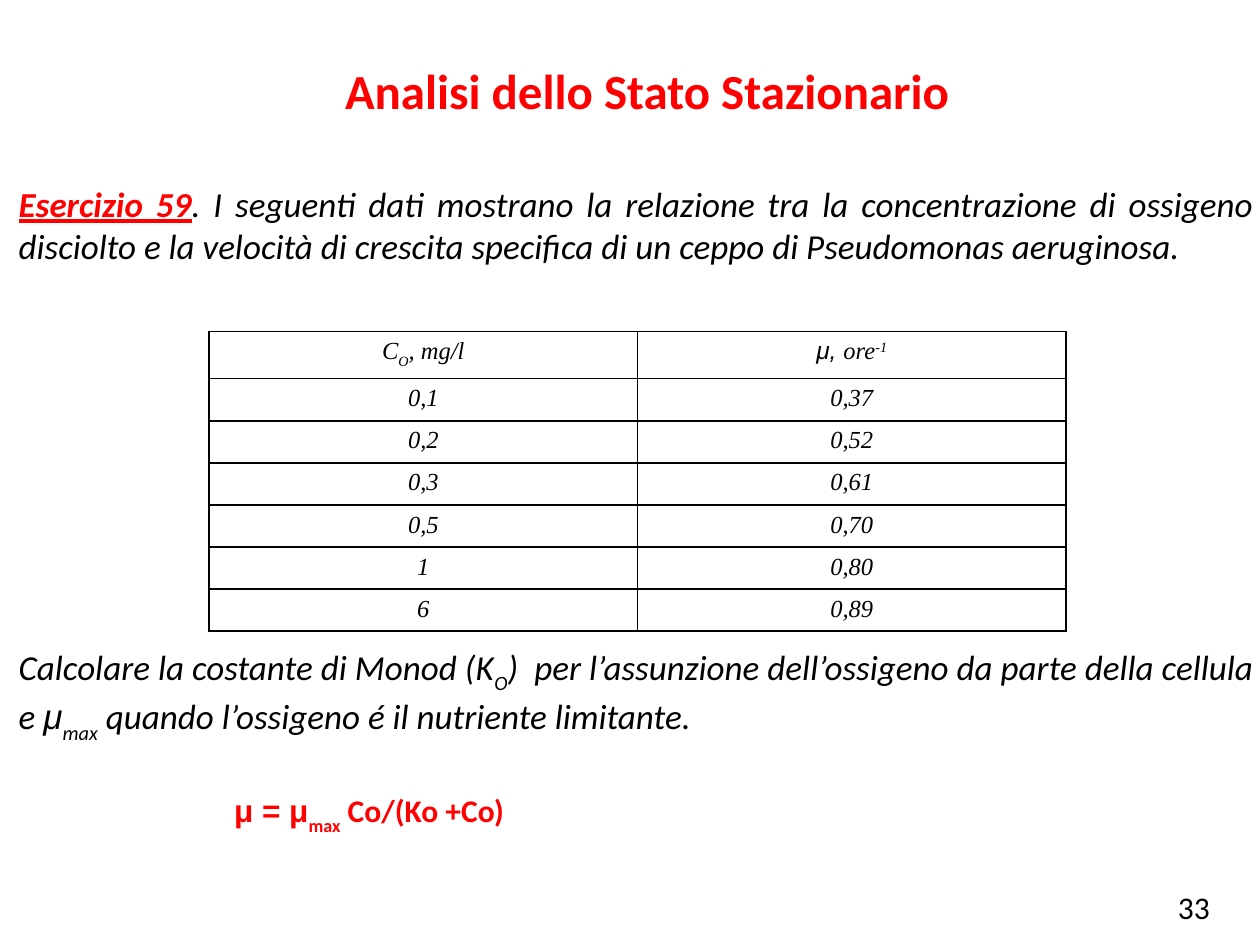
from lxml import etree
from pptx import Presentation
from pptx.dml.color import RGBColor
from pptx.enum import text
from pptx.oxml.ns import qn
from pptx.util import Inches, Pt

COLORS = {"red": "FF0000", "black": "000000"}
SUB, SUP = -30000, 30000

# A run is (text, options); options: font, baseline, and lead for the exercise label
TITLE = [("Analisi dello Stato Stazionario", {})]
INTRO = [
    ("Esercizio 59", {"lead": True}),
    (". I seguenti dati mostrano la relazione tra la concentrazione di ossigeno "
     "disciolto e la velocità di crescita specifica di un ceppo di Pseudomonas "
     "aeruginosa.", {}),
]
QUESTION = [
    ("Calcolare la costante di Monod (K", {}),
    ("O", {"baseline": SUB}),
    (")  per l’assunzione dell’ossigeno da parte della cellula e ", {}),
    ("μ", {"font": "Arial"}),
    ("max", {"baseline": SUB}),
    (" quando l’ossigeno é il nutriente limitante.", {}),
]
FORMULA = [
    ("μ = μ", {"font": "Arial"}),
    ("max", {"baseline": SUB}),
    (" Co/(Ko +Co)", {}),
]
PAGE = [("33", {})]
HEADER = [
    [("C", {}), ("O", {"baseline": SUB}), (", mg/l", {})],
    [("μ, ", {"font": "Arial"}), ("ore", {}), ("-1", {"baseline": SUP})],
]
DATA = [("0,1", "0,37"), ("0,2", "0,52"), ("0,3", "0,61"),
        ("0,5", "0,70"), ("1", "0,80"), ("6", "0,89")]
HEADER_HEIGHT, ROW_HEIGHT, COL_WIDTH = 0.37, 0.33, 3.4


def rgb(name):
    return RGBColor.from_string(COLORS[name])


def write(tf, runs, size, color="black", font="Calibri", bold=False,
          italic=False, align=text.PP_ALIGN.LEFT):
    p = tf.paragraphs[0]
    p.alignment = align
    p.font.size, p.font.bold, p.font.italic = Pt(size), bold, italic
    for words, options in runs:
        r = p.add_run()
        r.text = words
        f = r.font
        f.size, f.bold, f.italic = Pt(size), bold, italic
        f.name = options.get("font", font)
        f.color.rgb = rgb(color)
        if options.get("lead"):
            f.bold = f.underline = True
            f.color.rgb = rgb("red")
        if "baseline" in options:
            r._r.get_or_add_rPr().set("baseline", str(options["baseline"]))


def add_text(s, box, runs, size, wrap=True, **style):
    tf = s.shapes.add_textbox(*map(Inches, box)).text_frame
    tf.word_wrap = wrap
    write(tf, runs, size, **style)


def set_borders(cell):
    tcPr = cell._tc.get_or_add_tcPr()
    for i, side in enumerate(("lnL", "lnR", "lnT", "lnB")):
        ln = etree.Element(qn(f"a:{side}"), w=str(Pt(1)))
        fill = etree.SubElement(ln, qn("a:solidFill"))
        etree.SubElement(fill, qn("a:srgbClr"), val=COLORS["black"])
        tcPr.insert(i, ln)


def add_data_table(s, left, top):
    rows = HEADER, *[[[(value, {})] for value in row] for row in DATA]
    heights = [HEADER_HEIGHT] + [ROW_HEIGHT] * len(DATA)
    frame = s.shapes.add_table(len(rows), 2, Inches(left), Inches(top),
                               Inches(2 * COL_WIDTH), Inches(sum(heights)))
    table = frame.table
    table.first_row = table.horz_banding = False
    for col in table.columns:
        col.width = Inches(COL_WIDTH)
    for i, (row, height) in enumerate(zip(rows, heights)):
        table.rows[i].height = Inches(height)
        for j, runs in enumerate(row):
            cell = table.cell(i, j)
            cell.fill.background()
            set_borders(cell)
            write(cell.text_frame, runs, 14, font="Times New Roman",
                  italic=True, align=text.PP_ALIGN.CENTER)


def main():
    prs = Presentation()
    prs.slide_width, prs.slide_height = Inches(10), Inches(7.5)
    s = prs.slides.add_slide(prs.slide_layouts[5])

    title = s.shapes.title
    title.left, title.top, title.width, title.height = map(
        Inches, (2.52, 0.43, 5.23, 0.57))
    title.text_frame.word_wrap = False
    title.text_frame.auto_size = text.MSO_AUTO_SIZE.NONE
    title.text_frame.vertical_anchor = text.MSO_ANCHOR.TOP
    write(title.text_frame, TITLE, 28, color="red", bold=True,
          align=text.PP_ALIGN.CENTER)

    body = {"italic": True, "align": text.PP_ALIGN.JUSTIFY}
    add_text(s, (0.05, 1.4, 10, 0.77), INTRO, 20, **body)
    add_data_table(s, 1.66, 2.63)
    add_text(s, (0.05, 5.07, 10, 0.77), QUESTION, 20, **body)
    add_text(s, (1.76, 6.23, 5.07, 0.4), FORMULA, 18, color="red", bold=True)
    add_text(s, (9.25, 7, 0.53, 0.5), PAGE, 18, wrap=False)
    prs.save("out.pptx")


if __name__ == "__main__":
    main()
